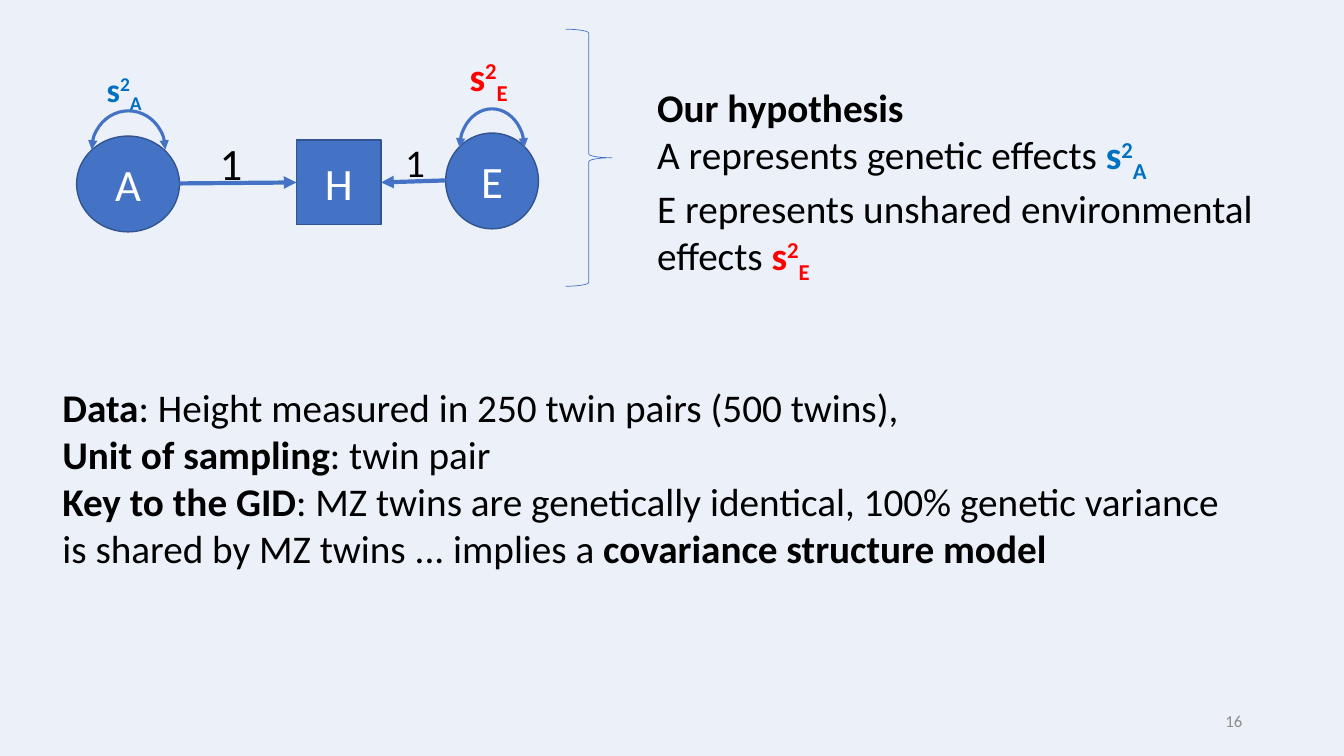
from dataclasses import dataclass

from lxml import etree
from pptx import Presentation
from pptx.dml.color import RGBColor
from pptx.enum import shapes, text
from pptx.oxml import ns
from pptx.util import Inches, Pt


@dataclass(frozen=True)
class Theme:
    font: str = "Calibri"
    background: str = "ECF1F9"
    blue: str = "4472C4"
    outline: str = "325491"
    genetic: str = "0070C0"
    environment: str = "FF0000"
    black: str = "000000"
    white: str = "FFFFFF"
    grey: str = "8C8C8C"
    node: int = 32
    body: int = 28
    small: int = 24
    footer: int = 12


THEME = Theme()


@dataclass(frozen=True)
class Span:
    text: str
    bold: bool = False
    color: str = THEME.black
    baseline: int = 0


def rgb(value):
    return RGBColor.from_string(value)


def variance(letter, color):
    """Spans for s² with a letter as subscript."""
    return [Span("s", True, color), Span("2", True, color, 30000),
            Span(letter, True, color, -25000)]


def write(frame, paragraphs, size, align=text.PP_ALIGN.LEFT):
    """Fill a text frame with paragraphs, each a list of spans."""
    for index, spans in enumerate(paragraphs):
        para = frame.paragraphs[0] if index == 0 else frame.add_paragraph()
        para.alignment = align
        for span in spans:
            run = para.add_run()
            run.text = span.text
            run.font.name = THEME.font
            run.font.size = Pt(size)
            run.font.bold = span.bold
            run.font.color.rgb = rgb(span.color)
            if span.baseline:
                run._r.get_or_add_rPr().set("baseline", str(span.baseline))


def add_text(page, place, paragraphs, size, wrap=True):
    box = page.shapes.add_textbox(*map(Inches, place))
    box.text_frame.word_wrap = wrap
    box.text_frame.auto_size = text.MSO_AUTO_SIZE.SHAPE_TO_FIT_TEXT
    write(box.text_frame, paragraphs, size)
    return box


def add_outline(page, kind, place, color, width):
    """Add an unfilled preset shape."""
    shape = page.shapes.add_shape(kind, *map(Inches, place))
    shape.shadow.inherit = False
    shape.fill.background()
    shape.line.color.rgb = rgb(color)
    shape.line.width = Pt(width)
    return shape


def add_node(page, kind, place, letter):
    node = add_outline(page, kind, place, THEME.outline, 1)
    node.fill.solid()
    node.fill.fore_color.rgb = rgb(THEME.blue)
    node.text_frame.vertical_anchor = text.MSO_ANCHOR.MIDDLE
    write(node.text_frame, [[Span(letter, color=THEME.white)]], THEME.node,
          text.PP_ALIGN.CENTER)
    return node


def add_arrowheads(line, *ends):
    for end in ends:
        etree.SubElement(line.get_or_add_ln(), ns.qn(f"a:{end}"), type="triangle")


def add_path(page, start, node, side):
    """Add an arrow from a point to the middle of a node's side."""
    x, y = map(Inches, start)
    arrow = page.shapes.add_connector(shapes.MSO_CONNECTOR.STRAIGHT, x, y, x, y)
    arrow.end_connect(node, side)
    arrow.line.color.rgb = rgb(THEME.blue)
    arrow.line.width = Pt(3)
    add_arrowheads(arrow, "tailEnd")
    etree.SubElement(arrow._element.spPr, ns.qn("a:effectLst"))


def add_variance_loop(page, left, top, width):
    """Add a double-headed half ellipse above a node."""
    loop = add_outline(page, shapes.MSO_SHAPE.ARC, (left, top, width, 0.77),
                       THEME.blue, 2.25)
    loop.adjustments[0] = 108  # 180 degrees, in units of 100000/60000 degree
    loop.adjustments[1] = 0
    add_arrowheads(loop.line._ln and loop, "headEnd", "tailEnd")


def add_path_diagram(page):
    height = add_node(page, shapes.MSO_SHAPE.RECTANGLE, (2.94, 1.39, 0.84, 0.84), "H")
    add_node(page, shapes.MSO_SHAPE.OVAL, (0.76, 1.35, 1.02, 0.95), "A")
    add_node(page, shapes.MSO_SHAPE.OVAL, (4.42, 1.32, 0.92, 0.95), "E")
    add_path(page, (1.78, 1.82), height, 1)
    add_path(page, (4.42, 1.79), height, 3)
    add_text(page, (2.08, 1.3, 0.43, 0.64), [[Span("1")]], THEME.node, wrap=False)
    add_text(page, (3.92, 1.32, 0.4, 0.57), [[Span("1")]], THEME.body)
    add_variance_loop(page, 0.91, 1.1, 0.73)
    add_variance_loop(page, 4.56, 1.08, 0.64)
    add_text(page, (0.96, 0.63, 1.64, 0.5), [variance("A", THEME.genetic)], THEME.small)
    add_text(page, (4.56, 0.47, 1.4, 0.57), [variance("E", THEME.environment)], THEME.body)


def add_hypothesis(page):
    add_outline(page, shapes.MSO_SHAPE.RIGHT_BRACE, (5.61, 0.29, 0.46, 2.55),
                THEME.blue, 0.5)
    add_text(page, (6.42, 0.78, 6.39, 1.99), [
        [Span("Our hypothesis", True)],
        [Span("A represents genetic effects "), *variance("A", THEME.genetic)],
        [Span("E represents unshared environmental effects "),
         *variance("E", THEME.environment)],
    ], THEME.body)


def add_study_design(page):
    add_text(page, (0.52, 3.75, 11.79, 1.99), [
        [Span("Data", True), Span(": Height measured in 250 twin pairs (500 twins),")],
        [Span("Unit of sampling", True), Span(": twin pair")],
        [Span("Key to the GID", True),
         Span(": MZ twins are genetically identical, 100% genetic variance "
              "is shared by MZ twins ... implies a "),
         Span("covariance structure model", True)],
    ], THEME.body)


def add_page_number(page, number):
    box = page.shapes.add_textbox(*map(Inches, (9.42, 6.95, 3, 0.4)))
    box.text_frame.word_wrap = True
    box.text_frame.vertical_anchor = text.MSO_ANCHOR.MIDDLE
    write(box.text_frame, [[Span(number, color=THEME.grey)]], THEME.footer,
          text.PP_ALIGN.RIGHT)


def main():
    deck = Presentation()
    deck.slide_width, deck.slide_height = Inches(13.33), Inches(7.5)
    page = deck.slides.add_slide(deck.slide_layouts[6])
    page.background.fill.solid()
    page.background.fill.fore_color.rgb = rgb(THEME.background)
    add_path_diagram(page)
    add_hypothesis(page)
    add_study_design(page)
    add_page_number(page, "16")
    deck.save("out.pptx")


if __name__ == "__main__":
    main()
